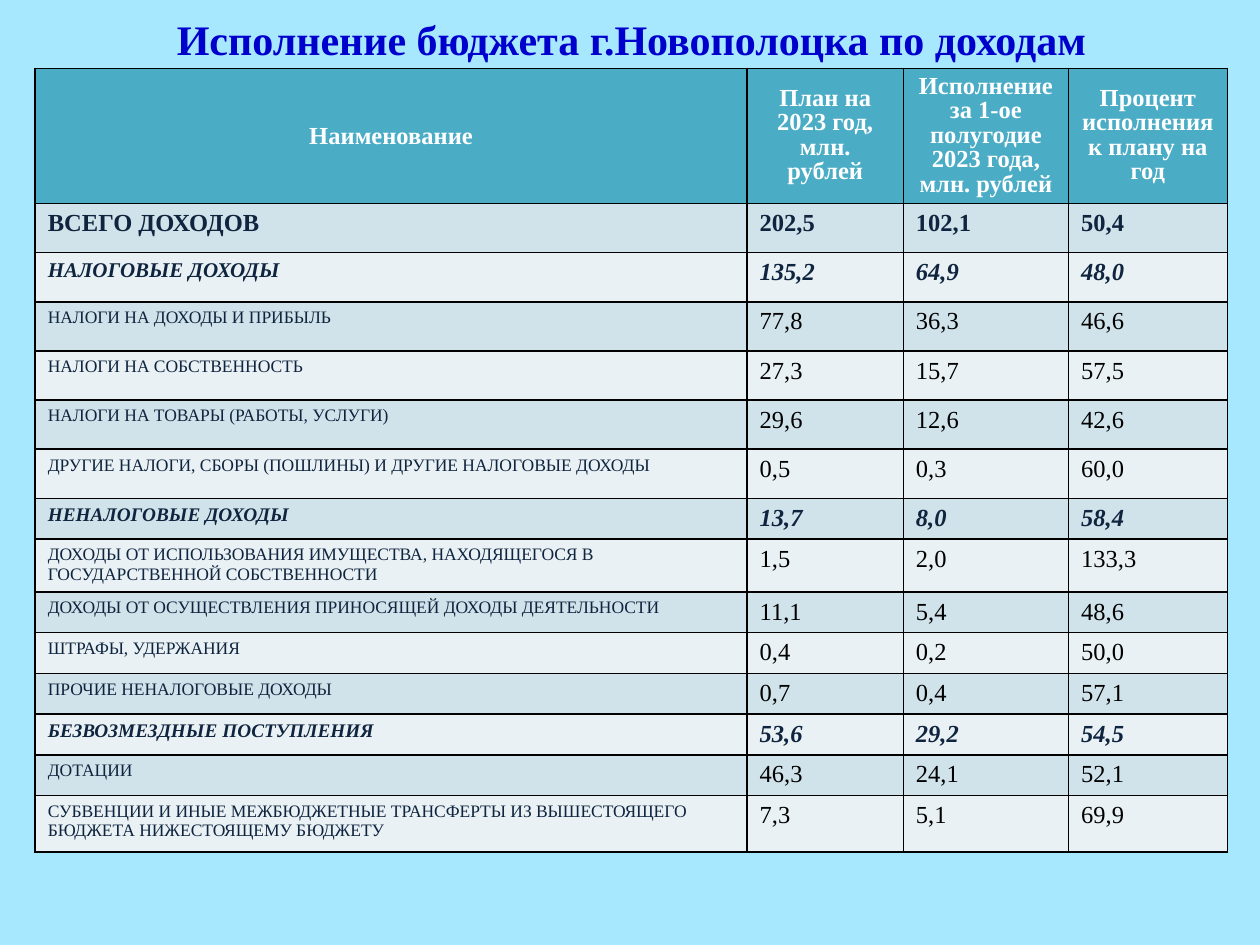
"""Build a slide with the city budget revenue table."""
from lxml import etree
from pptx import Presentation
from pptx import util as u
from pptx.dml.color import RGBColor
from pptx.enum import text
from pptx.oxml import ns

COLORS = {
    "background": "A7E8FF", "title": "0000CC", "header": "4BACC6",
    "odd": "D0E3EA", "even": "E9F1F5", "dark": "0F243E",
    "white": "FFFFFF", "black": "000000",
}
HEADERS = [
    "Наименование",
    "План на 2023 год, млн. рублей",
    "Исполнение за 1-ое полугодие 2023 года, млн. рублей",
    "Процент исполнения к плану на год",
]
ROWS = [
    ("total", 14, 0.99, "ВСЕГО ДОХОДОВ", "202,5", "102,1", "50,4"),
    ("group", 12, 0.99, "НАЛОГОВЫЕ ДОХОДЫ", "135,2", "64,9", "48,0"),
    ("item", 10, 0.99, "НАЛОГИ НА ДОХОДЫ И ПРИБЫЛЬ", "77,8", "36,3", "46,6"),
    ("item", 10, 0.99, "НАЛОГИ НА СОБСТВЕННОСТЬ", "27,3", "15,7", "57,5"),
    ("item", 10, 0.99, "НАЛОГИ НА ТОВАРЫ (РАБОТЫ, УСЛУГИ)", "29,6", "12,6", "42,6"),
    ("item", 10, 0.99, "ДРУГИЕ НАЛОГИ, СБОРЫ (ПОШЛИНЫ) И ДРУГИЕ НАЛОГОВЫЕ ДОХОДЫ",
     "0,5", "0,3", "60,0"),
    ("group", 11, 0.82, "НЕНАЛОГОВЫЕ ДОХОДЫ", "13,7", "8,0", "58,4"),
    ("item", 10, 1.07, "ДОХОДЫ ОТ ИСПОЛЬЗОВАНИЯ ИМУЩЕСТВА, НАХОДЯЩЕГОСЯ В "
     "ГОСУДАРСТВЕННОЙ СОБСТВЕННОСТИ", "1,5", "2,0", "133,3"),
    ("item", 10, 0.82, "ДОХОДЫ ОТ ОСУЩЕСТВЛЕНИЯ ПРИНОСЯЩЕЙ ДОХОДЫ ДЕЯТЕЛЬНОСТИ",
     "11,1", "5,4", "48,6"),
    ("item", 10, 0.82, "ШТРАФЫ, УДЕРЖАНИЯ", "0,4", "0,2", "50,0"),
    ("item", 10, 0.82, "ПРОЧИЕ НЕНАЛОГОВЫЕ ДОХОДЫ", "0,7", "0,4", "57,1"),
    ("group", 11, 0.82, "БЕЗВОЗМЕЗДНЫЕ ПОСТУПЛЕНИЯ", "53,6", "29,2", "54,5"),
    ("item", 10, 0.82, "ДОТАЦИИ", "46,3", "24,1", "52,1"),
    ("item", 10, 1.14, "СУБВЕНЦИИ И ИНЫЕ МЕЖБЮДЖЕТНЫЕ ТРАНСФЕРТЫ ИЗ ВЫШЕСТОЯЩЕГО "
     "БЮДЖЕТА НИЖЕСТОЯЩЕМУ БЮДЖЕТУ", "7,3", "5,1", "69,9"),
]
COL_WIDTHS = [14.35, 3.15, 3.33, 3.2]
ROW_HEIGHTS = [2.64] + [row[2] for row in ROWS]


def set_font(p, size, color, bold=False, italic=False):
    """Format a whole paragraph."""
    p.font.name = "Times New Roman"
    p.font.size = u.Pt(size)
    p.font.bold = bold
    p.font.italic = italic
    p.font.color.rgb = RGBColor.from_string(COLORS[color])


def style_cell(cell, fill):
    """Fill a cell and give it thin black borders."""
    cell.fill.solid()
    cell.fill.fore_color.rgb = RGBColor.from_string(COLORS[fill])
    tc_pr = cell._tc.get_or_add_tcPr()
    for i, side in enumerate(("lnL", "lnR", "lnT", "lnB")):
        ln = etree.Element(ns.qn(f"a:{side}"), w=str(u.Pt(1)))
        solid = etree.SubElement(ln, ns.qn("a:solidFill"))
        etree.SubElement(solid, ns.qn("a:srgbClr"), val=COLORS["black"])
        tc_pr.insert(i, ln)


prs = Presentation()
prs.slide_width, prs.slide_height = u.Cm(25.4), u.Cm(19.05)
s = prs.slides.add_slide(prs.slide_layouts[5])
s.background.fill.solid()
s.background.fill.fore_color.rgb = RGBColor.from_string(COLORS["background"])

title = s.shapes.title
title.left, title.top = u.Cm(1.3), u.Cm(0.1)
title.width, title.height = u.Cm(22.86), u.Cm(0.81)
tf = title.text_frame
tf.text = "Исполнение бюджета г.Новополоцка по доходам"
tf.auto_size = text.MSO_AUTO_SIZE.NONE
tf.vertical_anchor = text.MSO_ANCHOR.MIDDLE
p = tf.paragraphs[0]
p.alignment = text.PP_ALIGN.CENTER
p.line_spacing = u.Pt(44)
set_font(p, 24, "title", bold=True)

table = s.shapes.add_table(
    len(ROW_HEIGHTS), len(COL_WIDTHS), u.Cm(0.71), u.Cm(1.38),
    u.Cm(sum(COL_WIDTHS)), u.Cm(sum(ROW_HEIGHTS))).table
for column, width in zip(table.columns, COL_WIDTHS):
    column.width = u.Cm(width)
for row, height in zip(table.rows, ROW_HEIGHTS):
    row.height = u.Cm(height)

for j, label in enumerate(HEADERS):
    cell = table.cell(0, j)
    cell.text = label
    cell.vertical_anchor = text.MSO_ANCHOR.MIDDLE
    style_cell(cell, "header")
    p = cell.text_frame.paragraphs[0]
    p.alignment = text.PP_ALIGN.CENTER
    if j:
        p.line_spacing = u.Pt(14)
    set_font(p, 14, "white", bold=True)

for i, (kind, name_size, height, *values) in enumerate(ROWS, start=1):
    for j, value in enumerate(values):
        cell = table.cell(i, j)
        cell.text = value
        style_cell(cell, "odd" if i % 2 else "even")
        set_font(cell.text_frame.paragraphs[0],
                 14 if j else name_size,
                 "black" if j and kind == "item" else "dark",
                 bold=kind != "item", italic=kind == "group")

prs.save("out.pptx")
